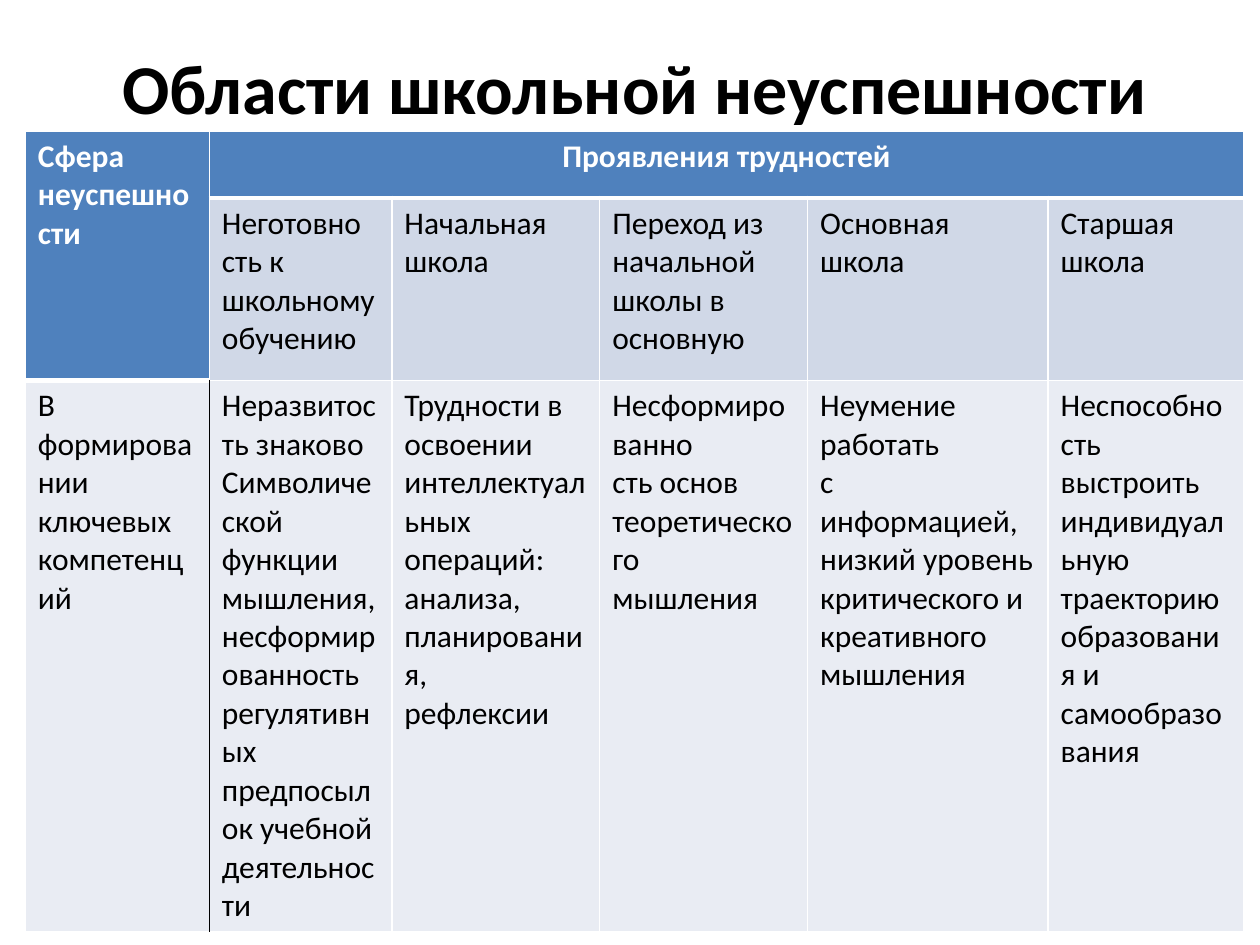
from lxml.etree import SubElement
from pptx import Presentation
from pptx.dml.color import RGBColor
from pptx.enum.text import MSO_ANCHOR, PP_ALIGN
from pptx.oxml.ns import qn
from pptx.util import Cm, Pt

FONT = "Calibri"
COLORS = {
    "text": "000000",
    "header": "4F81BD",
    "header_text": "FFFFFF",
    "stage": "D0D8E7",
    "body": "E9ECF3",
    "border": "FFFFFF",
    "divider": "000000",
}
THIN, THICK = 0.96, 3

TITLE = "Области школьной неуспешности"
COLUMN_WIDTHS = [3.71, 3.68, 4.19, 4.19, 4.85, 3.94]
ROW_HEIGHTS = [1.35, 3.68, 10.64]
SPHERE = "Сфера\nнеуспешности"
DIFFICULTIES = "Проявления трудностей"
STAGES = [
    "Неготовно\nсть к\nшкольному\nобучению",
    "Начальная\nшкола",
    "Переход из\nначальной\nшколы в\nосновную",
    "Основная школа",
    "Старшая школа",
]
COMPETENCES = [
    "В\nформировании ключевых\nкомпетенций",
    "Неразвитость знаково\nСимволической\nфункции мышления,\nнесформированность\n"
    "регулятивных\nпредпосылок учебной\nдеятельности",
    "Трудности в\nосвоении\nинтеллектуальных\nопераций:\nанализа,\nпланирования,\nрефлексии",
    "Несформированно\nсть основ\nтеоретического\nмышления",
    "Неумение работать\nс информацией,\nнизкий уровень\nкритического и\nкреативного\nмышления",
    "Неспособность\nвыстроить\nиндивидуальную\nтраекторию\nобразования и самообразования",
]


def write_text(text_frame, text, size=18, color="text", bold=False, align=PP_ALIGN.LEFT):
    """Write one paragraph for each line of the text."""
    for index, line in enumerate(text.split("\n")):
        paragraph = text_frame.add_paragraph() if index else text_frame.paragraphs[0]
        paragraph.alignment = align
        run = paragraph.add_run()
        run.text = line
        run.font.name = FONT
        run.font.size = Pt(size)
        run.font.bold = bold
        run.font.color.rgb = RGBColor.from_string(COLORS[color])


def add_border(cell, side, color="border", width=THIN):
    properties = cell._tc.get_or_add_tcPr()
    line = SubElement(properties, qn(f"a:ln{side}"), w=str(Pt(width)))
    fill = SubElement(line, qn("a:solidFill"))
    SubElement(fill, qn("a:srgbClr"), val=COLORS[color])


def is_header(row, column):
    return row == 0 or (row == 1 and column == 0)


def style_cell(cell, row, column):
    """Set the borders and the fill from the place of the cell in the grid."""
    header = is_header(row, column)
    above_header = row > 0 and is_header(row - 1, column)
    add_border(cell, "L", "divider" if (row, column) == (2, 1) else "border")
    add_border(cell, "R", "divider" if (row, column) == (2, 0) else "border")
    add_border(cell, "T", width=THICK if above_header and not header else THIN)
    add_border(cell, "B", width=THICK if header else THIN)
    fill_name = "header" if header else ("stage" if row == 1 else "body")
    cell.fill.solid()
    cell.fill.fore_color.rgb = RGBColor.from_string(COLORS[fill_name])


def place_title(slide, left, top, width, height):
    title = slide.shapes.title
    title.left, title.top, title.width, title.height = left, top, width, height
    title.text_frame.vertical_anchor = MSO_ANCHOR.MIDDLE
    write_text(title.text_frame, TITLE, size=40, bold=True, align=PP_ALIGN.CENTER)


def place_table(slide, left, top):
    frame = slide.shapes.add_table(
        len(ROW_HEIGHTS), len(COLUMN_WIDTHS), left, top,
        Cm(sum(COLUMN_WIDTHS)), Cm(sum(ROW_HEIGHTS)),
    )
    table = frame.table
    for column, width in zip(table.columns, COLUMN_WIDTHS):
        column.width = Cm(width)
    for row, height in zip(table.rows, ROW_HEIGHTS):
        row.height = Cm(height)
    for row in range(len(ROW_HEIGHTS)):
        for column in range(len(COLUMN_WIDTHS)):
            style_cell(table.cell(row, column), row, column)

    # Merged headings
    table.cell(0, 0).merge(table.cell(1, 0))
    table.cell(0, 1).merge(table.cell(0, len(COLUMN_WIDTHS) - 1))
    write_text(table.cell(0, 0).text_frame, SPHERE, color="header_text", bold=True)
    write_text(table.cell(0, 1).text_frame, DIFFICULTIES,
               color="header_text", bold=True, align=PP_ALIGN.CENTER)

    # School stages and the difficulties in each
    for column, text in enumerate(STAGES, start=1):
        write_text(table.cell(1, column).text_frame, text)
    for column, text in enumerate(COMPETENCES):
        write_text(table.cell(2, column).text_frame, text)


def main():
    presentation = Presentation()
    presentation.slide_width, presentation.slide_height = Cm(25.4), Cm(19.05)
    slide = presentation.slides.add_slide(presentation.slide_layouts[5])
    place_title(slide, Cm(0.89), Cm(0.76), Cm(23.8), Cm(1.96))
    place_table(slide, Cm(0.51), Cm(2.64))
    presentation.save("out.pptx")


if __name__ == "__main__":
    main()
